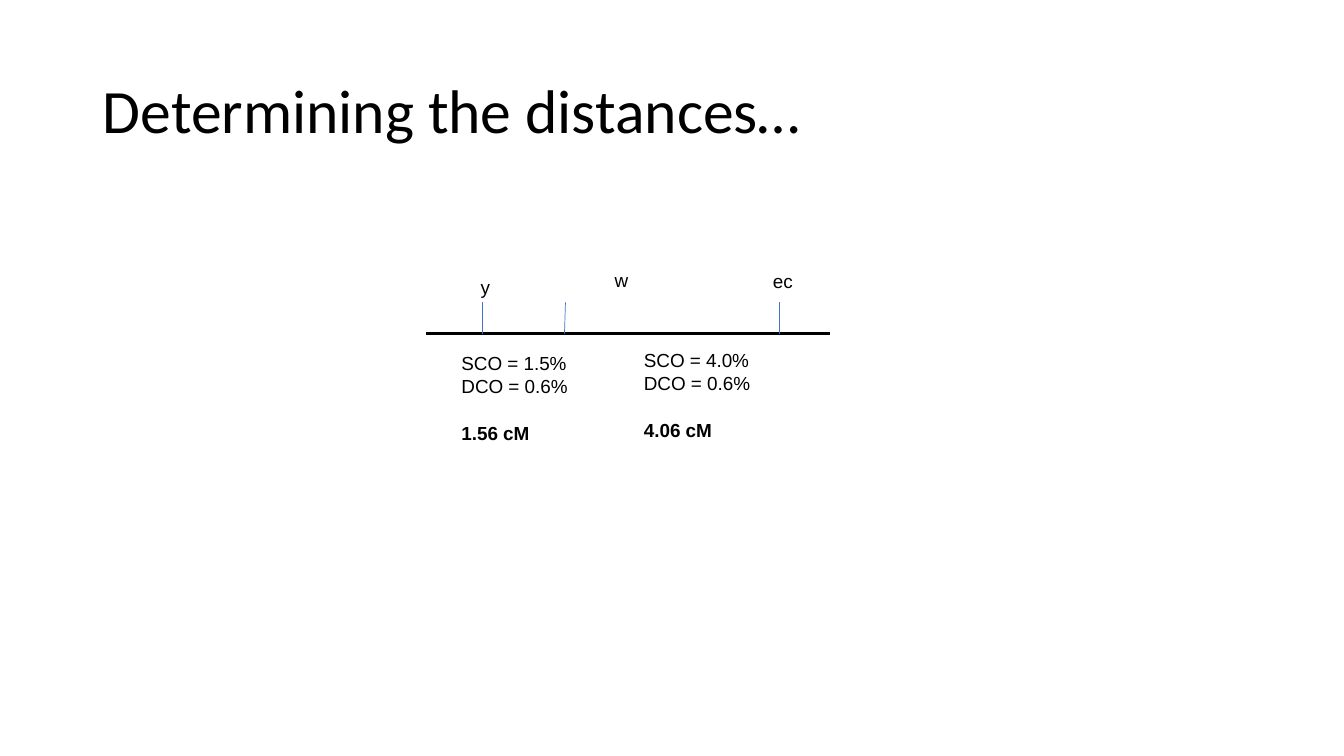
"""Build the slide that shows the map distances between the genes y, w and ec."""
from dataclasses import dataclass

from lxml import etree
from pptx import Presentation
from pptx import util as u
from pptx.dml.color import RGBColor
from pptx.enum import shapes, text
from pptx.oxml.ns import qn
from pptx.slide import Slide
from pptx.text.text import _Paragraph as Paragraph

BLACK = "000000"
BLUE = "4472C4"
MAP_LEFT, MAP_RIGHT, MAP_Y = 304.56, 592.56, 238.32
TICK_TOP = 216
LABEL_SIZE = 13.5
DISTANCE_GAP = 17.5


@dataclass(frozen=True)
class Line:
    start: tuple[float, float]
    end: tuple[float, float]
    color: str
    width: float


@dataclass(frozen=True)
class Label:
    left: float
    top: float
    width: float
    height: float
    lines: tuple[str, ...]
    distance: str = ""
    wrap: bool = True


LINES = [Line((MAP_LEFT, MAP_Y), (MAP_RIGHT, MAP_Y), BLACK, 2.25)] + [
    Line((top_x, TICK_TOP), (bottom_x, MAP_Y), BLUE, 0.5)
    for top_x, bottom_x in ((344.88, 344.88), (403.92, 403.2), (556.56, 556.56))
]

LABELS = [
    Label(336.24, 193.68, 27.36, 23.76, ("y",)),
    Label(432, 188.64, 24.48, 23.76, ("w",), wrap=False),
    Label(545.04, 189.36, 28.8, 23.76, ("ec",), wrap=False),
    Label(322.56, 247.68, 108, 72.72, ("SCO = 1.5%", "DCO = 0.6%"), "1.56 cM"),
    Label(452.88, 245.52, 108, 72.72, ("SCO = 4.0%", "DCO = 0.6%"), "4.06 cM"),
]


def rgb(color: str) -> RGBColor:
    return RGBColor.from_string(color)


def add_run(paragraph: Paragraph, wording: str, font: str, size: float, bold: bool = False) -> None:
    run = paragraph.add_run()
    run.text = wording
    run.font.name = font
    run.font.size = u.Pt(size)
    run.font.bold = bold
    run.font.color.rgb = rgb(BLACK)


def format_title(slide: Slide, wording: str) -> None:
    title = slide.shapes.title
    title.left, title.top, title.width, title.height = map(u.Pt, (66.24, 28.8, 828, 104.4))
    frame = title.text_frame
    frame.auto_size = text.MSO_AUTO_SIZE.NONE
    frame.vertical_anchor = text.MSO_ANCHOR.MIDDLE
    paragraph = frame.paragraphs[0]
    paragraph.alignment = text.PP_ALIGN.LEFT
    paragraph.line_spacing = 0.9
    add_run(paragraph, wording, "Calibri", 44)


def draw_line(slide: Slide, line: Line) -> None:
    connector = slide.shapes.add_connector(
        shapes.MSO_CONNECTOR.STRAIGHT, *map(u.Pt, line.start + line.end)
    )
    connector.line.color.rgb = rgb(line.color)
    connector.line.width = u.Pt(line.width)
    etree.SubElement(connector._element.spPr, qn("a:effectLst"))


def draw_label(slide: Slide, label: Label) -> None:
    shape = slide.shapes.add_textbox(
        *map(u.Pt, (label.left, label.top, label.width, label.height))
    )
    frame = shape.text_frame
    frame.word_wrap = label.wrap
    frame.auto_size = text.MSO_AUTO_SIZE.SHAPE_TO_FIT_TEXT
    for index, wording in enumerate(label.lines):
        paragraph = frame.add_paragraph() if index else frame.paragraphs[0]
        add_run(paragraph, wording, "Arial", LABEL_SIZE)
    if label.distance:
        paragraph = frame.add_paragraph()
        paragraph.space_before = u.Pt(DISTANCE_GAP)
        add_run(paragraph, label.distance, "Arial", LABEL_SIZE, bold=True)


def main() -> None:
    presentation = Presentation()
    presentation.slide_width, presentation.slide_height = u.Pt(960), u.Pt(540)
    slide = presentation.slides.add_slide(presentation.slide_layouts.get_by_name("Title Only"))
    format_title(slide, "Determining the distances…")
    for line in LINES:
        draw_line(slide, line)
    for label in LABELS:
        draw_label(slide, label)
    presentation.save("out.pptx")


if __name__ == "__main__":
    main()
